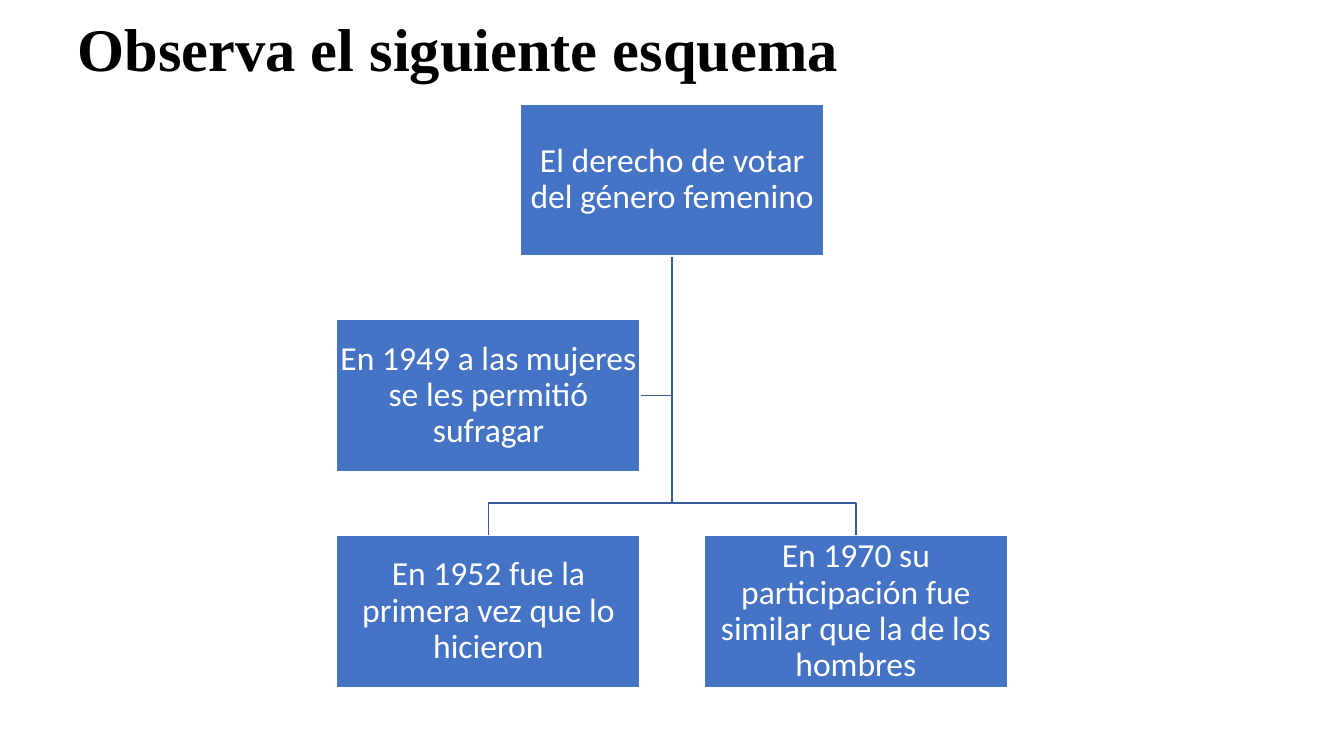
"""Builds a slide with a chart of women's right to vote."""
from pptx import Presentation
from pptx.dml.color import RGBColor
from pptx.enum.shapes import MSO_SHAPE
from pptx.enum.text import MSO_ANCHOR, MSO_AUTO_SIZE, PP_ALIGN
from pptx.util import Cm, Pt


def paint(color, value):
    color.rgb = RGBColor.from_string(value)


def write(shape, text, font, size, value, align):
    frame = shape.text_frame
    frame.text = text
    frame.word_wrap = True
    frame.auto_size = MSO_AUTO_SIZE.NONE
    frame.vertical_anchor = MSO_ANCHOR.MIDDLE
    line = frame.paragraphs[0]
    line.alignment = align
    line.line_spacing = 0.9
    run = line.runs[0]
    run.font.name = font
    run.font.size = Pt(size)
    paint(run.font.color, value)
    return run


deck = Presentation()
deck.slide_width, deck.slide_height = Cm(33.87), Cm(19.05)
slide = deck.slides.add_slide(deck.slide_layouts[5])

title = slide.shapes.title
title.left, title.top, title.width, title.height = Cm(1.7), Cm(0.61), Cm(26.49), Cm(1.4)
head = write(title, "Observa el siguiente esquema", "Times New Roman", 43.2, "000000", PP_ALIGN.LEFT)
head.font.bold = True

wide, high = 7.65, 3.83
mid, step = 16.94, 4.63
left, right = mid - step, mid + step
top, side, low = 2.62, 8.05, 13.49
base = top + high
fork = low - 0.81
level = side + high / 2

routes = [
    [(mid, level), (left + wide / 2, level)],
    [(mid, fork), (right, fork), (right, low)],
    [(mid, fork), (left, fork), (left, low)],
]
for route in routes:
    pen = slide.shapes.build_freeform(Cm(mid), Cm(base))
    pen.add_line_segments([(Cm(x), Cm(y)) for x, y in route], close=False)
    link = pen.convert_to_shape()
    link.shadow.inherit = False
    link.fill.background()
    link.line.width = Pt(1)
    paint(link.line.color, "365B9D")

nodes = [
    (mid, top, "El derecho de votar del género femenino"),
    (left, low, "En 1952 fue la primera vez que lo hicieron"),
    (right, low, "En 1970 su participación fue similar que la de los hombres"),
    (left, side, "En 1949 a las mujeres se les permitió sufragar"),
]
for x, y, text in nodes:
    box = slide.shapes.add_shape(MSO_SHAPE.RECTANGLE, Cm(x - wide / 2), Cm(y), Cm(wide), Cm(high))
    box.shadow.inherit = False
    box.fill.solid()
    paint(box.fill.fore_color, "4472C4")
    box.line.width = Pt(1)
    paint(box.line.color, "FFFFFF")
    write(box, text, "Calibri", 24, "FFFFFF", PP_ALIGN.CENTER)
    frame = box.text_frame
    frame.margin_left = frame.margin_right = Cm(0.04)
    frame.margin_top = frame.margin_bottom = Cm(0.04)

deck.save("out.pptx")
